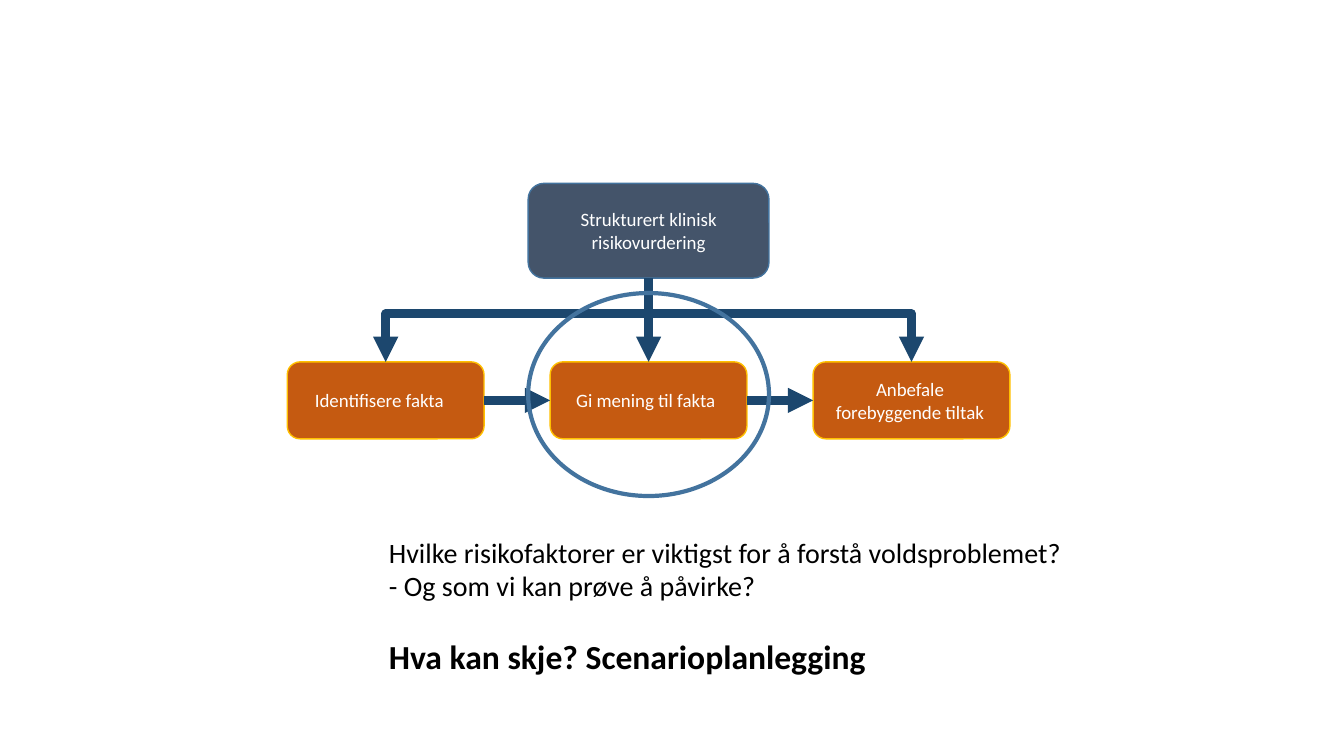
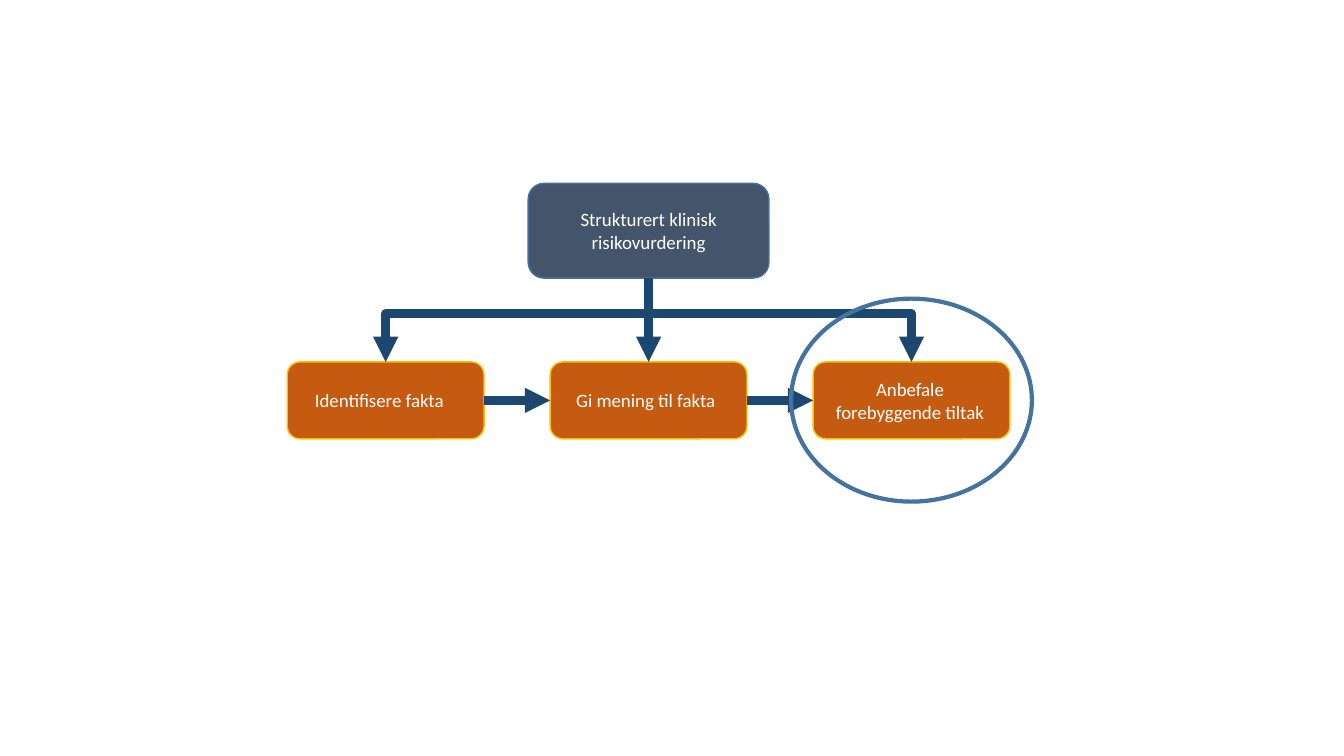
import dataclasses

import pptx
import pptx.dml.color
import pptx.enum.shapes
import pptx.enum.text
import pptx.oxml
import pptx.oxml.ns
import pptx.util

Pt = pptx.util.Pt
SHAPES = pptx.enum.shapes.MSO_SHAPE
CONNECTORS = pptx.enum.shapes.MSO_CONNECTOR


@dataclasses.dataclass(frozen=True)
class Theme:
    font: str = "Calibri"
    root_fill: str = "44546A"
    outline: str = "43739E"
    step_fill: str = "C55A11"
    step_line: str = "FFC000"
    arrow: str = "1C476E"
    light: str = "FFFFFF"
    dark: str = "000000"
    box_size: float = 13.5
    body_size: float = 20
    heading_size: float = 24
    box_line: float = 1
    ring_line: float = 3
    arrow_line: float = 6


THEME = Theme()
STEPS = [
    ("Identifisere fakta", 9),
    ("Gi mening til fakta", 4),
    ("Anbefale forebyggende tiltak", 2),
]
STEP_LEFT, STEP_TOP, STEP_W, STEP_H, STEP_PITCH = 205.2, 258.5, 140.6, 55, 187.8
ROOT_TOP, ROOT_W, ROOT_H = 131, 172, 67.7
BRANCH_Y = 224
RING_H = 145


def rgb(value):
    return pptx.dml.color.RGBColor.from_string(value)


def apply(target, formats):
    for name, value in formats.items():
        setattr(target, name, value)


def step_left(index):
    return STEP_LEFT + index * STEP_PITCH


def step_center(index):
    return step_left(index) + STEP_W / 2


def write(p, text, size, color, bold=False):
    r = p.add_run()
    r.text = text
    apply(r.font, {"name": THEME.font, "size": Pt(size), "bold": bold})
    r.font.color.rgb = rgb(color)


def add_outline(slide, kind, left, top, width, height, line, weight):
    s = slide.shapes.add_shape(kind, Pt(left), Pt(top), Pt(width), Pt(height))
    s.shadow.inherit = False
    s.line.color.rgb = rgb(line)
    s.line.width = Pt(weight)
    return s


def add_box(slide, left, top, width, height, fill, line, text, shift=0):
    s = add_outline(slide, SHAPES.ROUNDED_RECTANGLE, left, top, width, height,
                    line, THEME.box_line)
    s.fill.solid()
    s.fill.fore_color.rgb = rgb(fill)
    tf = s.text_frame
    apply(tf, {
        "word_wrap": True,
        "vertical_anchor": pptx.enum.text.MSO_ANCHOR.MIDDLE,
        "margin_right": Pt(7.2 + shift),
    })
    p = tf.paragraphs[0]
    p.alignment = pptx.enum.text.PP_ALIGN.CENTER
    write(p, text, THEME.box_size, THEME.light)


def add_ring(slide, index, top):
    s = add_outline(slide, SHAPES.OVAL, step_center(index) - ROOT_W / 2, top,
                    ROOT_W, RING_H, THEME.outline, THEME.ring_line)
    s.fill.background()


def add_arrow(slide, x1, y1, x2, y2, kind=CONNECTORS.STRAIGHT):
    s = slide.shapes.add_connector(kind, Pt(x1), Pt(y1), Pt(x2), Pt(y2))
    s.line.color.rgb = rgb(THEME.arrow)
    s.line.width = Pt(THEME.arrow_line)
    props = s.element.spPr
    line = props.find(pptx.oxml.ns.qn("a:ln"))
    head = pptx.oxml.parse_xml(
        f'<a:tailEnd {pptx.oxml.ns.nsdecls("a")} type="triangle"/>')
    line.append(head)
    props.append(pptx.oxml.parse_xml(
        f'<a:effectLst {pptx.oxml.ns.nsdecls("a")}/>'))
    return props


def add_branch(slide, index):
    center, target = step_center(1), step_center(index)
    if target < center:
        ends = (target, STEP_TOP, center, BRANCH_Y)
    else:
        ends = (center, BRANCH_Y, target, STEP_TOP)
    props = add_arrow(slide, *ends, kind=CONNECTORS.ELBOW)
    props.find(pptx.oxml.ns.qn("a:prstGeom")).set("prst", "bentConnector2")
    if target < center:
        props.find(pptx.oxml.ns.qn("a:xfrm")).set("rot", "10800000")


def add_process(slide):
    center = step_center(1)
    add_box(slide, center - ROOT_W / 2, ROOT_TOP, ROOT_W, ROOT_H,
            THEME.root_fill, THEME.outline, "Strukturert klinisk risikovurdering")
    for i, (text, shift) in enumerate(STEPS):
        add_box(slide, step_left(i), STEP_TOP, STEP_W, STEP_H,
                THEME.step_fill, THEME.step_line, text, shift)
    add_arrow(slide, center, ROOT_TOP + ROOT_H, center, STEP_TOP)
    for i in (0, 2):
        add_branch(slide, i)
    middle = STEP_TOP + STEP_H / 2
    for i in range(len(STEPS) - 1):
        add_arrow(slide, step_left(i) + STEP_W, middle, step_left(i + 1), middle)


def add_text(slide, left, top, width, height, lines):
    tf = slide.shapes.add_textbox(Pt(left), Pt(top), Pt(width), Pt(height)).text_frame
    tf.word_wrap = True
    for i, (text, size, bold, before) in enumerate(lines):
        p = tf.paragraphs[0] if i == 0 else tf.add_paragraph()
        p.space_before = Pt(before)
        write(p, text, size, THEME.dark, bold)


def main():
    prs = pptx.Presentation()
    apply(prs, {"slide_width": Pt(960), "slide_height": Pt(540)})
    questions = [
        ("Hvilke risikofaktorer er viktigst for å forstå voldsproblemet?",
         THEME.body_size, False, 0),
        ("- Og som vi kan prøve å påvirke?", THEME.body_size, False, 0),
        ("Hva kan skje? Scenarioplanlegging", THEME.heading_size, True, 24),
    ]
    for index, ring_top, lines in ((1, 209.3, questions), (2, 213.3, [])):
        slide = prs.slides.add_slide(prs.slide_layouts[6])
        add_process(slide)
        if lines:
            add_text(slide, 270.7, 378.7, 510, 108.7, lines)
        add_ring(slide, index, ring_top)
    prs.save("out.pptx")


if __name__ == "__main__":
    main()
